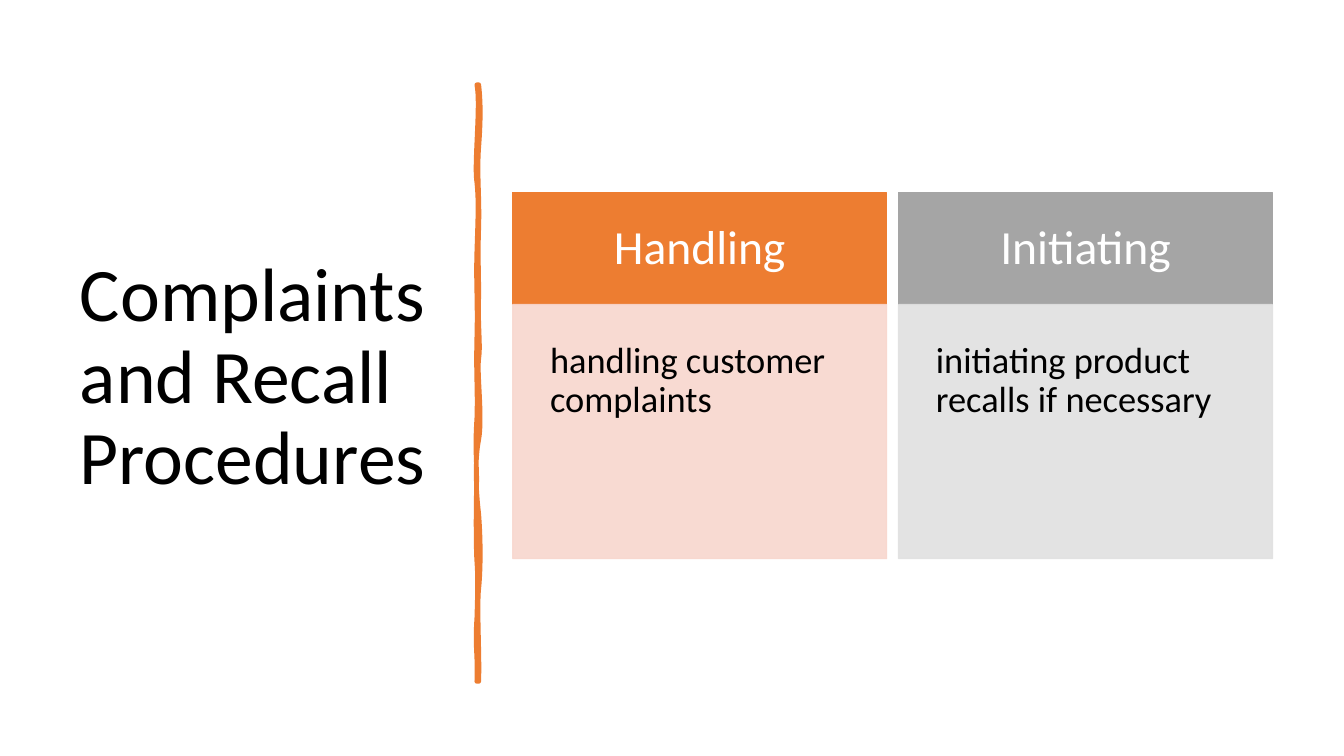
"""Build the slide on complaints and recall procedures."""
from lxml import etree
from pptx import Presentation
from pptx.dml.color import RGBColor
from pptx.enum.shapes import MSO_SHAPE
from pptx.enum.text import MSO_ANCHOR, PP_ALIGN
from pptx.oxml.ns import qn
from pptx.util import Pt

RECTANGLE = MSO_SHAPE.RECTANGLE
TOP, MIDDLE = MSO_ANCHOR.TOP, MSO_ANCHOR.MIDDLE
LEFT, CENTER = PP_ALIGN.LEFT, PP_ALIGN.CENTER

BLACK = RGBColor(0x00, 0x00, 0x00)
WHITE = RGBColor(0xFF, 0xFF, 0xFF)
ORANGE = RGBColor(0xED, 0x7D, 0x31)
GRAY = RGBColor(0xA5, 0xA5, 0xA5)
PALE_ORANGE = RGBColor(0xF8, 0xD7, 0xCE)
PALE_GRAY = RGBColor(0xE1, 0xE1, 0xE1)

FONT = "Calibri"
TITLE = "Complaints and Recall Procedures"
CARDS = [
    ("Handling", "handling customer complaints", ORANGE, PALE_ORANGE),
    ("Initiating", "initiating product recalls if necessary", GRAY, PALE_GRAY),
]

CARD_LEFT, CARD_TOP, CARD_WIDTH, CARD_STEP = 366.3, 137.7, 267, 275.6
HEADER_HEIGHT, BODY_HEIGHT = 79.9, 181.4
HEADER_INSET, BODY_INSET = 20.6, 26.6

STROKE_UNIT = Pt(0.72)
STROKE_LEFT, STROKE_TOP = 473, 84
STROKE_OUTLINE = [
    (475, 84), (477, 102), (477, 119), (475, 146), (473, 173), (476, 195), (475, 226),
    (474, 257), (475, 262), (475, 294), (474, 325), (477, 342), (475, 356),
    (473, 370), (479, 414), (475, 436), (471, 457), (472, 484), (475, 510),
    (477, 536), (477, 564), (475, 584), (473, 603), (476, 650), (475, 676),
    (474, 676), (473, 676), (473, 676), (474, 646), (471, 644), (473, 613),
    (474, 583), (474, 570), (473, 557), (472, 544), (472, 495), (473, 477),
    (473, 459), (471, 445), (473, 415), (474, 386), (472, 373), (473, 335),
    (474, 298), (472, 281), (473, 250), (474, 218), (475, 200), (473, 181),
    (470, 163), (477, 104), (473, 84), (474, 84), (474, 84), (475, 84),
]
STROKE_BODY = [
    (475, 84), (475, 115), (472, 125), (475, 152), (477, 179), (474, 197), (475, 208),
    (476, 220), (474, 255), (475, 294), (476, 333), (473, 343), (475, 362),
    (477, 381), (477, 397), (475, 430), (472, 463), (475, 474), (475, 516),
    (475, 557), (474, 553), (475, 578), (476, 603), (474, 647), (475, 676),
    (474, 675), (473, 675), (473, 676), (470, 649), (474, 632), (473, 613),
    (472, 595), (475, 569), (473, 539), (471, 510), (476, 500), (473, 471),
    (470, 442), (477, 420), (473, 386), (469, 351), (474, 325), (473, 300),
    (471, 275), (471, 259), (473, 238), (474, 216), (474, 185), (473, 164),
    (471, 143), (475, 121), (473, 84), (474, 84), (474, 84), (475, 84),
]


def bend(outline, controls):
    """Turn the straight segments of an outline into cubic curves."""
    for index, segment in enumerate(list(outline.iter(qn("a:lnTo")))):
        curve = etree.Element(qn("a:cubicBezTo"))
        for x, y in controls[3 * index + 1:3 * index + 4]:
            etree.SubElement(curve, qn("a:pt"), x=str(x - STROKE_LEFT), y=str(y - STROKE_TOP))
        outline.replace(segment, curve)


def add_stroke(page):
    """Draw the brush stroke as one shape with an outline and a body."""
    builder = page.shapes.build_freeform(*STROKE_OUTLINE[0], scale=STROKE_UNIT)
    builder.add_line_segments(STROKE_OUTLINE[3::3], close=True)
    builder.move_to(*STROKE_BODY[0])
    builder.add_line_segments(STROKE_BODY[3::3], close=True)
    stroke = builder.convert_to_shape()
    stroke.shadow.inherit = False
    stroke.fill.solid()
    stroke.fill.fore_color.rgb = ORANGE
    stroke.line.color.rgb = ORANGE
    stroke.line.width = Pt(3.25)
    properties = stroke.element.spPr
    etree.SubElement(properties.find(qn("a:ln")), qn("a:round"))

    outline = next(properties.iter(qn("a:path")))
    body = etree.SubElement(
        outline.getparent(), qn("a:path"),
        w=outline.get("w"), h=outline.get("h"), stroke="0")
    outline.set("fill", "none")
    parts = list(outline)
    for part in parts[len(parts) // 2:]:
        body.append(part)
    bend(outline, STROKE_OUTLINE)
    bend(body, STROKE_BODY)


def write(shape, text, size, color, inset, anchor, align):
    """Put one paragraph into a shape."""
    frame = shape.text_frame
    frame.word_wrap = True
    frame.vertical_anchor = anchor
    frame.margin_left = frame.margin_right = Pt(inset[0])
    frame.margin_top = frame.margin_bottom = Pt(inset[1])
    para = frame.paragraphs[0]
    para.alignment = align
    para.line_spacing = 0.9
    span = para.add_run()
    span.text = text
    span.font.name = FONT
    span.font.size = Pt(size)
    span.font.color.rgb = color


def add_panel(page, left, top, height, color, opacity):
    """Draw one rectangle of a card."""
    panel = page.shapes.add_shape(
        RECTANGLE, Pt(left), Pt(top), Pt(CARD_WIDTH), Pt(height))
    panel.shadow.inherit = False
    panel.line.width = Pt(1)
    for fill in (panel.fill, panel.line.fill):
        fill.solid()
        fill.fore_color.rgb = color
    if opacity < 100:
        for tint in panel.element.spPr.iter(qn("a:srgbClr")):
            etree.SubElement(tint, qn("a:alpha"), val=str(opacity * 1000))
    return panel


def main():
    """Build and save the deck."""
    deck = Presentation()
    deck.slide_width, deck.slide_height = Pt(960), Pt(540)
    page = deck.slides.add_slide(deck.slide_layouts[6])

    title = page.shapes.add_textbox(Pt(50), Pt(50.4), Pt(269.3), Pt(439.9))
    write(title, TITLE, 54, BLACK, (7.2, 3.6), MIDDLE, LEFT)
    add_stroke(page)

    for index, (heading, detail, strong, pale) in enumerate(CARDS):
        left = CARD_LEFT + index * CARD_STEP
        header = add_panel(page, left, CARD_TOP, HEADER_HEIGHT, strong, 100)
        write(header, heading, 34, WHITE, (HEADER_INSET, HEADER_INSET), MIDDLE, CENTER)
        panel = add_panel(page, left, CARD_TOP + HEADER_HEIGHT, BODY_HEIGHT, pale, 90)
        write(panel, detail, 26, BLACK, (BODY_INSET, BODY_INSET), TOP, LEFT)

    deck.save("out.pptx")


if __name__ == "__main__":
    main()
